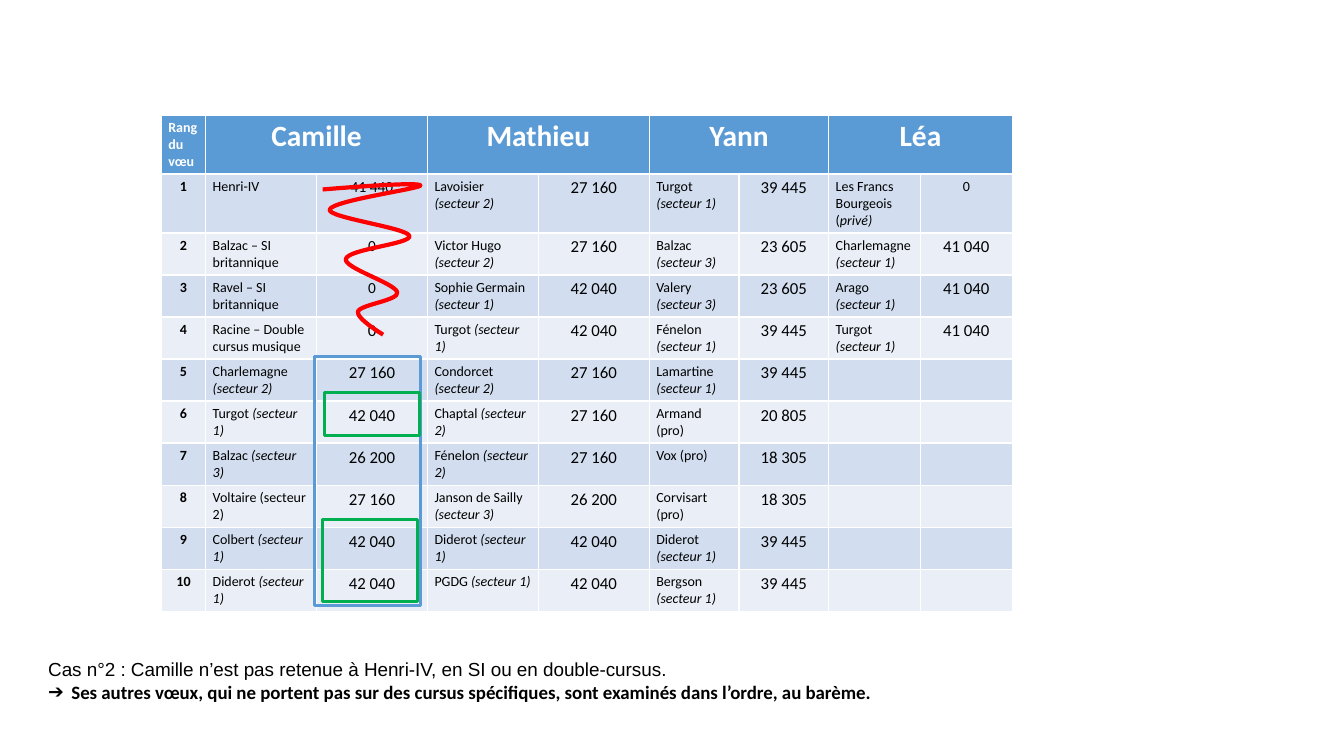
from lxml import etree
from pptx import Presentation
from pptx.dml.color import RGBColor
from pptx.enum.shapes import MSO_SHAPE as Shape
from pptx.enum.text import PP_ALIGN as Align
from pptx.oxml.ns import qn
from pptx.util import Inches, Pt

BLUE, RED, GREEN, WHITE, BLACK = "5B9BD5", "FF0000", "00B050", "FFFFFF", "000000"
BANDS = ["D2DEEF", "EAEFF7"]
COLUMN_WIDTHS = [0.44] + [1.1] * 4 + [0.89] * 2 + [0.91] * 2
ROW_HEIGHTS = [0.58] * 2 + [0.41] * 9
PUPILS = ["Camille", "Mathieu", "Yann", "Léa"]
# Per rank: school and points for each pupil; "|" starts the italic part.
WISHES = [
    ["Henri-IV", "41 440", "Lavoisier |(secteur 2)", "27 160",
     "Turgot |(secteur 1)", "39 445", "Les Francs Bourgeois (|privé)", "0"],
    ["Balzac – SI britannique", "0", "Victor Hugo| (secteur 2)", "27 160",
     "Balzac |(secteur 3)", "23 605", "Charlemagne |(secteur 1)", "41 040"],
    ["Ravel – SI britannique", "0", "Sophie Germain |(secteur 1)", "42 040",
     "Valery |(secteur 3)", "23 605", "Arago |(secteur 1)", "41 040"],
    ["Racine – Double cursus musique", "0", "Turgot |(secteur 1)", "42 040",
     "Fénelon |(secteur 1)", "39 445", "Turgot |(secteur 1)", "41 040"],
    ["Charlemagne |(secteur 2)", "27 160", "Condorcet |(secteur 2)", "27 160",
     "Lamartine |(secteur 1)", "39 445"],
    ["Turgot |(secteur 1)", "42 040", "Chaptal |(secteur 2)", "27 160",
     "Armand (pro)", "20 805"],
    ["Balzac| (secteur 3)", "26 200", "Fénelon |(secteur 2)", "27 160",
     "Vox (pro)", "18 305"],
    ["Voltaire (secteur 2)", "27 160", "Janson de Sailly |(secteur 3)", "26 200",
     "Corvisart (pro)", "18 305"],
    ["Colbert |(secteur 1)", "42 040", "Diderot |(secteur 1)", "42 040",
     "Diderot |(secteur 1)", "39 445"],
    ["Diderot |(secteur 1)", "42 040", "PGDG |(secteur 1)", "42 040",
     "Bergson |(secteur 1)", "39 445"],
]
SMALL_POINTS = {(1, 2): 11, (2, 2): 11, (3, 2): 11, (1, 8): 10}
# Offsets from the top left: start, then three control points per curve.
SCRIBBLE = [
    (0, 0.05), (0.48, 0.01), (0.96, -0.02), (0.97, 0.01),
    (0.98, 0.04), (0.09, 0.16), (0.07, 0.25), (0.05, 0.33), (0.84, 0.43), (0.86, 0.51),
    (0.89, 0.59), (0.25, 0.64), (0.23, 0.74), (0.21, 0.83), (0.72, 0.98), (0.74, 1.07),
    (0.76, 1.15), (0.38, 1.19), (0.35, 1.26), (0.33, 1.33), (0.6, 1.49), (0.6, 1.49),
]


def color(value):
    return RGBColor.from_string(value)


def inches(box):
    return [Inches(length) for length in box]


def add_span(para, text, tint=BLACK, **formats):
    span = para.add_run()
    span.text = text
    span.font.color.rgb = color(tint)
    for name, value in ({"name": "Calibri", "bold": False} | formats).items():
        setattr(span.font, name, value)


def fill_cell(cell, text, fill, size, align=Align.CENTER, **formats):
    cell.fill.solid()
    cell.fill.fore_color.rgb = color(fill)
    cell.margin_left = cell.margin_right = Inches(0.07)
    cell.margin_top = cell.margin_bottom = Inches(0.04)
    para = cell.text_frame.paragraphs[0]
    para.alignment = align
    for index, part in enumerate(text.split("|")):
        if part:
            add_span(para, part, size=Pt(size), italic=index == 1, **formats)


def add_wish_table(slide, box):
    frame = slide.shapes.add_table(len(ROW_HEIGHTS), len(COLUMN_WIDTHS), *inches(box))
    table = frame.table
    for column, width in zip(table.columns, COLUMN_WIDTHS):
        column.width = Inches(width)
    for row, height in zip(table.rows, ROW_HEIGHTS):
        row.height = Inches(height)

    fill_cell(table.cell(0, 0), "Rang du vœu", BLUE, 10, Align.LEFT, tint=WHITE, bold=True)
    for index, pupil in enumerate(PUPILS):
        first = 1 + 2 * index
        table.cell(0, first).merge(table.cell(0, first + 1))
        fill_cell(table.cell(0, first), pupil, BLUE, 21, tint=WHITE, bold=True)

    for rank, wishes in enumerate(WISHES, 1):
        band = BANDS[(rank - 1) % 2]
        fill_cell(table.cell(rank, 0), str(rank), band, 10, bold=True)
        padded = wishes + [""] * (2 * len(PUPILS) - len(wishes))
        for column, text in enumerate(padded, 1):
            is_school = column % 2 == 1
            size = 10 if is_school else SMALL_POINTS.get((rank, column), 12)
            align = Align.LEFT if is_school else Align.CENTER
            fill_cell(table.cell(rank, column), text, band, size, align)


def add_comment(slide, box):
    frame = slide.shapes.add_textbox(*inches(box)).text_frame
    frame.word_wrap = True
    add_span(frame.paragraphs[0],
             "Cas n°2 : Camille n’est pas retenue à Henri-IV, en SI ou en double-cursus.",
             name="Arial", size=Pt(13.5))
    para = frame.add_paragraph()
    properties = para._p.get_or_add_pPr()
    properties.set("marL", str(Inches(0.23)))
    properties.set("indent", str(-Inches(0.23)))
    etree.SubElement(properties, qn("a:buFont")).set("typeface", "Arial")
    etree.SubElement(properties, qn("a:buChar")).set("char", "➔")
    add_span(para,
             "Ses autres vœux, qui ne portent pas sur des cursus spécifiques, "
             "sont examinés dans l’ordre, au barème.",
             size=Pt(13.5), bold=True)


def outline(shape, tint, width):
    shape.shadow.inherit = False
    shape.fill.background()
    shape.line.color.rgb = color(tint)
    shape.line.width = Pt(width)


def add_scribble(slide, left, top):
    points = [(Inches(left + x), Inches(top + y)) for x, y in SCRIBBLE]
    builder = slide.shapes.build_freeform(*points[0])
    builder.add_line_segments(points[1:], close=False)
    scribble = builder.convert_to_shape()
    outline(scribble, RED, 3)
    # Turn each three straight segments into one Bézier curve.
    segments = list(scribble._element.iter(qn("a:lnTo")))
    for start in range(0, len(segments), 3):
        curve = etree.SubElement(segments[start].getparent(), qn("a:cubicBezTo"))
        for segment in segments[start:start + 3]:
            curve.append(segment[0])
            segment.getparent().remove(segment)


def add_frame(slide, box, tint):
    outline(slide.shapes.add_shape(Shape.RECTANGLE, *inches(box)), tint, 2.25)


def main():
    deck = Presentation()
    deck.slide_width, deck.slide_height = Inches(13.33), Inches(7.5)
    slide = deck.slides.add_slide(deck.slide_layouts[6])
    add_wish_table(slide, (1.6, 1.14, sum(COLUMN_WIDTHS), sum(ROW_HEIGHTS)))
    add_comment(slide, (0.38, 6.48, 12.67, 1))
    add_scribble(slide, 3.2, 1.83)
    add_frame(slide, (3.12, 3.54, 1.05, 2.47), BLUE)
    add_frame(slide, (3.22, 3.89, 0.94, 0.43), GREEN)
    add_frame(slide, (3.2, 5.15, 0.94, 0.82), GREEN)
    deck.save("out.pptx")


if __name__ == "__main__":
    main()
